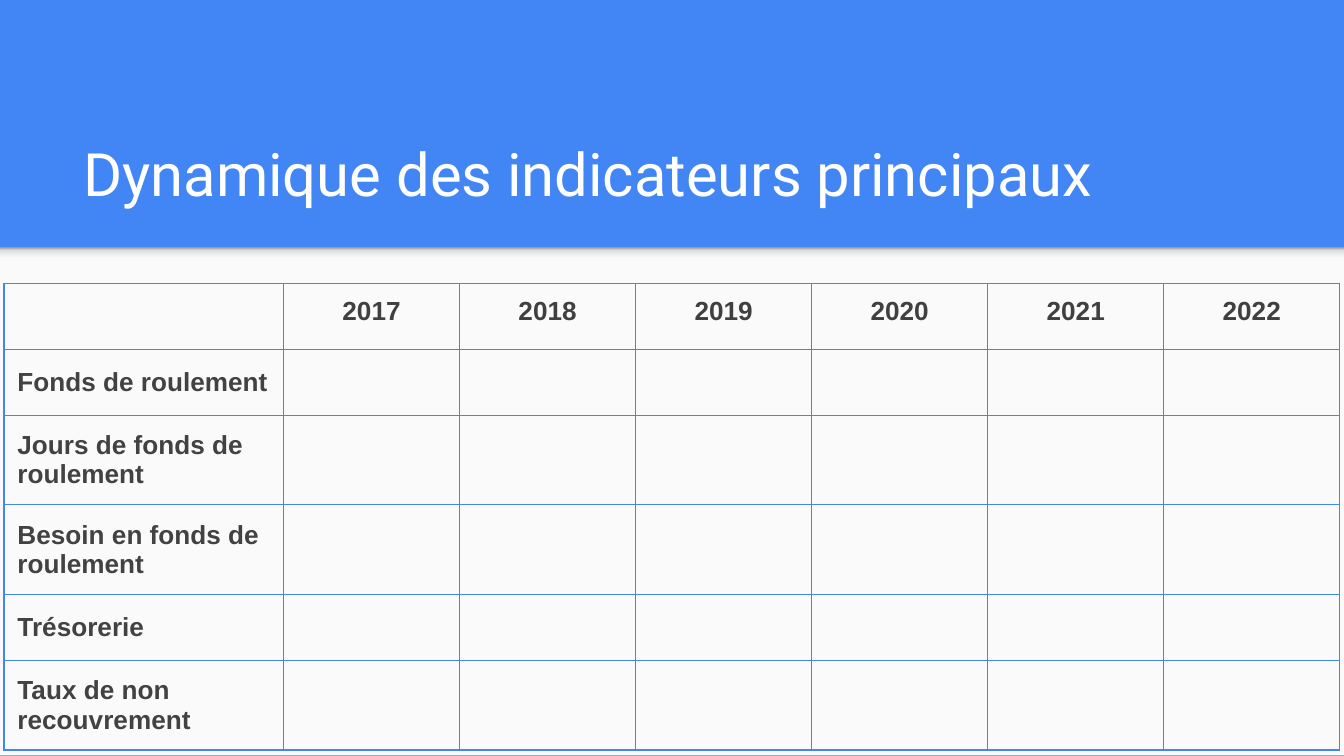
from lxml import etree
from pptx import Presentation
from pptx.dml.color import RGBColor
from pptx.enum import shapes, text
from pptx.oxml import ns, parse_xml
from pptx.util import Inches, Pt

BLUE = RGBColor(0x42, 0x85, 0xF4)
PAPER = RGBColor(0xFA, 0xFA, 0xFA)
WHITE = RGBColor(0xFF, 0xFF, 0xFF)
HEADER_GREY = RGBColor(0x40, 0x40, 0x40)
LABEL_GREY = RGBColor(0x42, 0x42, 0x42)
SHADOW_STOPS = [(0, "F9F9F9"), (36, "F9F9F9"), (80, "DEDEDE"), (100, "999999")]

YEARS = ["2017", "2018", "2019", "2020", "2021", "2022"]
INDICATORS = [
    "Fonds de roulement",
    "Jours de fonds de roulement",
    "Besoin en fonds de roulement",
    "Trésorerie",
    "Taux de non recouvrement",
]
COLUMN_WIDTHS = [2.08] + [1.31] * len(YEARS)
ROW_HEIGHTS = [0.49, 0.49, 0.66, 0.66, 0.49, 0.66]


def add_run(paragraph, words, font, size, color, bold=False):
    run = paragraph.add_run()
    run.text = words
    run.font.name = font
    run.font.size = Pt(size)
    run.font.bold = bold
    run.font.color.rgb = color


def set_border(cell, side, color):
    line = etree.SubElement(cell._tc.get_or_add_tcPr(), ns.qn(f"a:{side}"), w=str(Pt(0.75)))
    fill = etree.SubElement(line, ns.qn("a:solidFill"))
    etree.SubElement(fill, ns.qn("a:srgbClr"), val=str(color))


# Widescreen slide, 16:9
presentation = Presentation()
presentation.slide_width = Inches(10)
presentation.slide_height = Inches(10 * 9 / 16)
slide = presentation.slides.add_slide(presentation.slide_layouts[6])
slide.background.fill.solid()
slide.background.fill.fore_color.rgb = BLUE

# Light body and the soft shadow along its top edge
for height in (3.78, 0.12):
    panel = slide.shapes.add_shape(
        shapes.MSO_SHAPE.RECTANGLE, Inches(0), Inches(1.84), Inches(10), Inches(height))
    panel.shadow.inherit = False
    panel.line.fill.background()
    panel.fill.solid()
    panel.fill.fore_color.rgb = PAPER

stops = "".join(
    f'<a:gs pos="{position * 1000}"><a:srgbClr val="{color}"/></a:gs>'
    for position, color in SHADOW_STOPS)
gradient = parse_xml(
    f'<a:gradFill {ns.nsdecls("a")}><a:gsLst>{stops}</a:gsLst>'
    '<a:lin ang="16200000" scaled="0"/></a:gradFill>')
properties = panel._element.spPr
properties.replace(properties.find(ns.qn("a:solidFill")), gradient)

# Title
title = slide.shapes.add_textbox(Inches(0.52), Inches(0.81), Inches(8.99), Inches(0.84))
frame = title.text_frame
frame.word_wrap = True
frame.vertical_anchor = text.MSO_ANCHOR.BOTTOM
frame.margin_left = frame.margin_right = frame.margin_top = frame.margin_bottom = Inches(0.1)
add_run(frame.paragraphs[0], "Dynamique des indicateurs principaux", "Roboto", 32, WHITE)

# Table of indicators by year
table = slide.shapes.add_table(
    len(ROW_HEIGHTS), len(COLUMN_WIDTHS), Inches(0.03), Inches(2.11),
    Inches(sum(COLUMN_WIDTHS)), Inches(sum(ROW_HEIGHTS))).table
table.first_row = False
table.horz_banding = False
for column, width in zip(table.columns, COLUMN_WIDTHS):
    column.width = Inches(width)
for row, height in zip(table.rows, ROW_HEIGHTS):
    row.height = Inches(height)

for row_index, row in enumerate(table.rows):
    for column_index, cell in enumerate(row.cells):
        cell.margin_left = cell.margin_right = Inches(0.1)
        cell.margin_top = cell.margin_bottom = Inches(0.1)
        for side in ("lnL", "lnR", "lnT", "lnB"):
            set_border(cell, side, BLUE)
        cell.fill.background()
        paragraph = cell.text_frame.paragraphs[0]
        paragraph.font.size = Pt(14)
        if row_index == 0 and column_index > 0:
            paragraph.alignment = text.PP_ALIGN.CENTER
            add_run(paragraph, YEARS[column_index - 1], "Arial", 14, HEADER_GREY, True)
        elif row_index > 0 and column_index == 0:
            cell.vertical_anchor = text.MSO_ANCHOR.MIDDLE
            add_run(paragraph, INDICATORS[row_index - 1], "Arial", 14, LABEL_GREY, True)

presentation.save("out.pptx")
